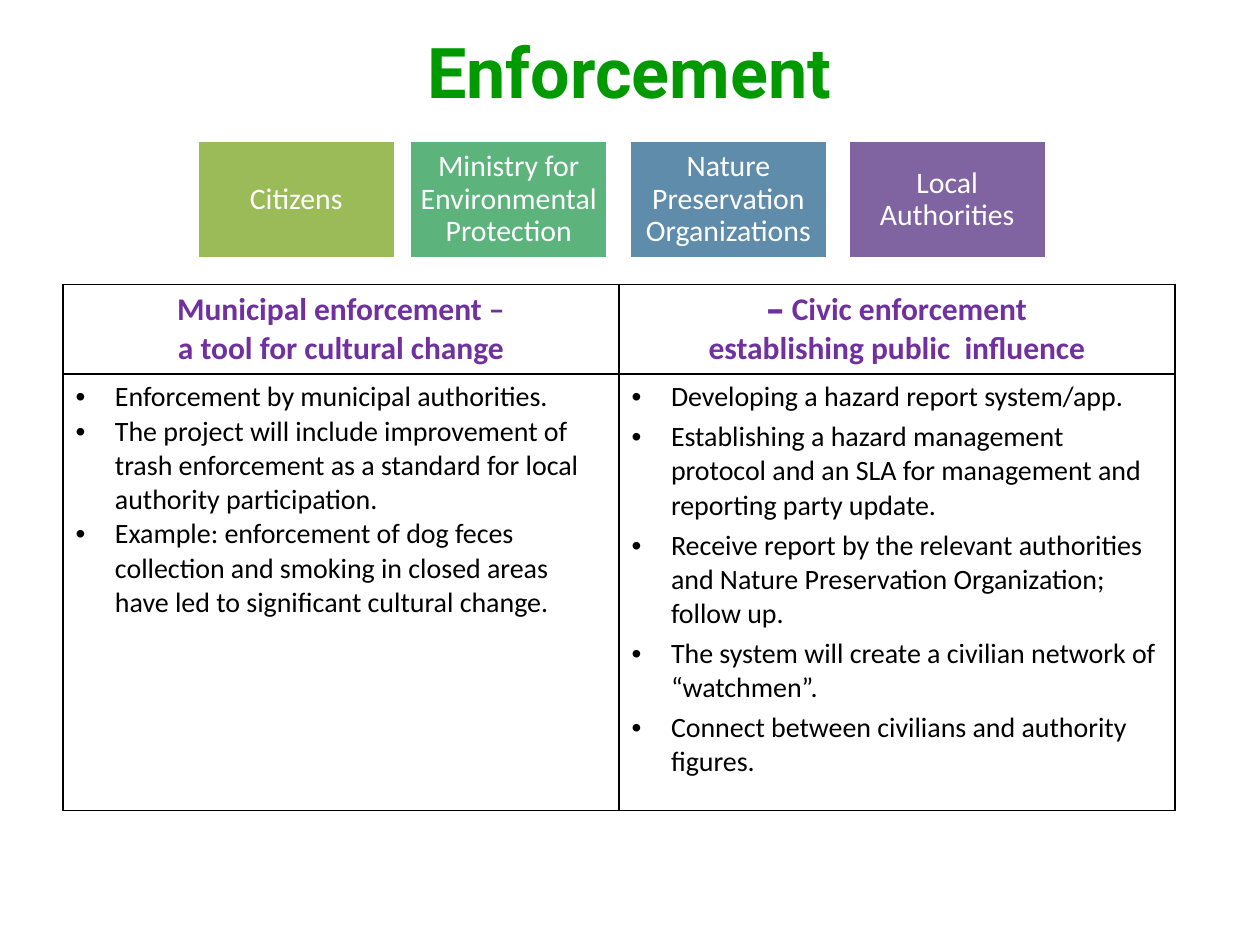
from lxml import etree
from pptx import Presentation
from pptx import util as u
from pptx.dml.color import RGBColor
from pptx.enum import shapes, text
from pptx.oxml import ns

COLORS = {
    "title": "009900", "heading": "7030A0", "body": "000000", "white": "FFFFFF",
    "citizens": "9BBB59", "ministry": "5CB37C", "nature": "608CAB", "local": "8064A2",
}
ACTORS = [
    (112.5, "Citizens", "citizens"),
    (234, "Ministry for Environmental Protection", "ministry"),
    (359.5, "Nature Preservation Organizations", "nature"),
    (484.5, "Local Authorities", "local"),
]
MUNICIPAL = [
    "Enforcement by municipal authorities.",
    "The project will include improvement of trash enforcement as a standard for local "
    "authority participation.",
    "Example: enforcement of dog feces collection and smoking in closed areas have led to "
    "significant cultural change.",
]
CIVIC = [
    "Developing a hazard report system/app.",
    "Establishing a hazard management protocol and an SLA for management and reporting "
    "party update.",
    "Receive report by the relevant authorities and Nature Preservation Organization; follow up.",
    "The system will create a civilian network of “watchmen”.",
    "Connect between civilians and authority figures.",
]


class SlideBuilder:
    """Holds the style and the current slide, and adds each kind of element."""

    def __init__(self, slide, font="Calibri"):
        self.slide = slide
        self.font = font

    def color(self, name):
        return RGBColor.from_string(COLORS[name])

    def style(self, paragraph, size, color, bold=False, font=None):
        paragraph.font.name = font or self.font
        paragraph.font.size = u.Pt(size)
        paragraph.font.bold = bold
        paragraph.font.color.rgb = self.color(color)

    def center(self, paragraph, rtl=True):
        paragraph.alignment = text.PP_ALIGN.CENTER
        if rtl:
            paragraph._p.get_or_add_pPr().set("rtl", "1")

    def title(self, words, left, top, width, height):
        shape = self.slide.shapes.title
        shape.left, shape.top, shape.width, shape.height = map(u.Pt, (left, top, width, height))
        shape.text_frame.text = words
        shape.text_frame.vertical_anchor = text.MSO_ANCHOR.MIDDLE
        paragraph = shape.text_frame.paragraphs[0]
        self.center(paragraph)
        self.style(paragraph, 40, "title", True, "Roboto")

    def box(self, words, fill, left, top, width, height):
        shape = self.slide.shapes.add_shape(
            shapes.MSO_SHAPE.RECTANGLE, *map(u.Pt, (left, top, width, height)))
        shape.shadow.inherit = False
        shape.fill.solid()
        shape.fill.fore_color.rgb = self.color(fill)
        shape.line.color.rgb = self.color("white")
        shape.line.width = u.Pt(2)
        frame = shape.text_frame
        frame.word_wrap = True
        frame.vertical_anchor = text.MSO_ANCHOR.MIDDLE
        frame.margin_left = frame.margin_right = u.Pt(5)
        frame.margin_top = frame.margin_bottom = u.Pt(5)
        frame.text = words
        paragraph = frame.paragraphs[0]
        paragraph.line_spacing = 0.9
        self.center(paragraph)
        self.style(paragraph, 17, "white")

    def table(self, left, top, widths, heights):
        frame = self.slide.shapes.add_table(
            len(heights), len(widths),
            *map(u.Pt, (left, top, sum(widths), sum(heights))))
        table = frame.table
        table.first_row = table.horz_banding = False
        for column, width in zip(table.columns, widths):
            column.width = u.Pt(width)
        for row, height in zip(table.rows, heights):
            row.height = u.Pt(height)
        for cell in table.iter_cells():
            self.border(cell)
            cell.fill.background()
        return table

    def border(self, cell):
        properties = cell._tc.get_or_add_tcPr()
        for side in ("lnL", "lnR", "lnT", "lnB"):
            line = etree.SubElement(properties, ns.qn(f"a:{side}"), w=str(u.Pt(1)))
            fill = etree.SubElement(line, ns.qn("a:solidFill"))
            etree.SubElement(fill, ns.qn("a:srgbClr"), val=COLORS["body"])

    def paragraphs(self, cell, lines):
        frame = cell.text_frame
        for index, line in enumerate(lines):
            paragraph = frame.add_paragraph() if index else frame.paragraphs[0]
            paragraph.text = line
            yield index, paragraph

    def heading(self, cell, lines, rtl=False):
        for _, paragraph in self.paragraphs(cell, lines):
            self.center(paragraph, rtl)
            self.style(paragraph, 18, "heading", True)

    def bullets(self, cell, lines, gap=0):
        for index, paragraph in self.paragraphs(cell, lines):
            if index:
                paragraph.space_before = u.Pt(gap)
            properties = paragraph._p.get_or_add_pPr()
            properties.set("marL", str(u.Pt(22.5)))
            properties.set("indent", str(-u.Pt(22.5)))
            etree.SubElement(properties, ns.qn("a:buFont"), typeface="Arial")
            etree.SubElement(properties, ns.qn("a:buChar"), char="•")
            self.style(paragraph, 16, "body")


def main():
    presentation = Presentation()
    presentation.slide_width, presentation.slide_height = u.Pt(720), u.Pt(540)
    builder = SlideBuilder(presentation.slides.add_slide(presentation.slide_layouts[5]))
    builder.title("Enforcement", 35.5, 8, 648, 65)
    for left, words, fill in ACTORS:
        builder.box(words, fill, left, 80, 113.5, 68)
    table = builder.table(36, 162.5, (317.75, 317.75), (50, 249.5))
    builder.heading(table.cell(0, 0), ["Municipal enforcement –\va tool for cultural change"])
    builder.heading(table.cell(0, 1),
                    ["Civic enforcement –", "establishing public  influence"], rtl=True)
    builder.bullets(table.cell(1, 0), MUNICIPAL)
    builder.bullets(table.cell(1, 1), CIVIC, gap=3.2)
    presentation.save("out.pptx")


if __name__ == "__main__":
    main()
